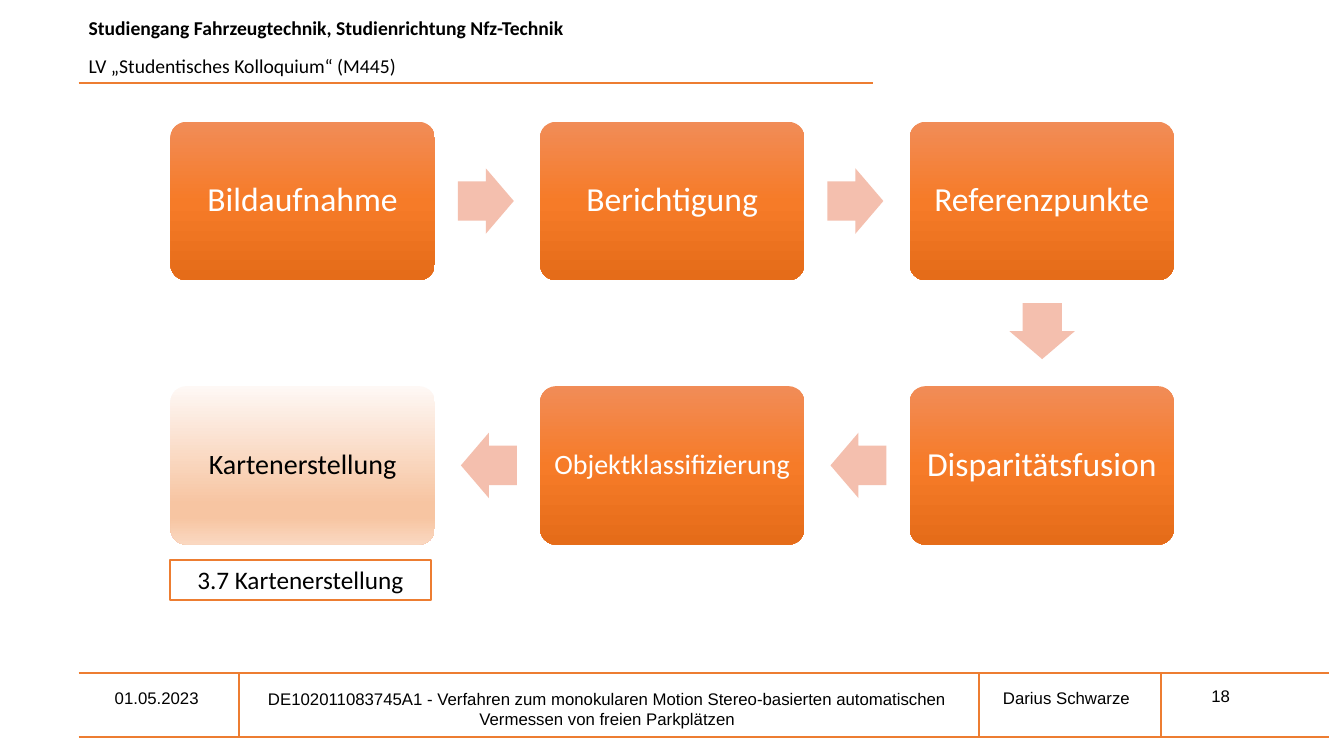
from lxml import etree
from pptx import Presentation
from pptx.dml.color import RGBColor
from pptx.enum.shapes import MSO_CONNECTOR, MSO_SHAPE
from pptx.enum.text import MSO_ANCHOR, PP_ALIGN
from pptx.oxml import parse_xml
from pptx.oxml.ns import nsdecls, qn
from pptx.util import Pt

LEFT, CENTER = PP_ALIGN.LEFT, PP_ALIGN.CENTER
TOP, MIDDLE = MSO_ANCHOR.TOP, MSO_ANCHOR.MIDDLE
STRAIGHT = MSO_CONNECTOR.STRAIGHT
RECTANGLE, ROUNDED = MSO_SHAPE.RECTANGLE, MSO_SHAPE.ROUNDED_RECTANGLE
RIGHT_ARROW = MSO_SHAPE.RIGHT_ARROW

ORANGE, PALE_ORANGE = "ED7D31", "F4BFAE"
BLACK, WHITE = "000000", "FFFFFF"
STEP_GRADIENT = [(0, "F18C57"), (50, "F67B28"), (100, "E56C19")]
CURRENT_GRADIENT = [(0, "FEF8F5"), (74, "F7C5A2"), (83, "F7C5A2"), (100, "FAD8C1")]


def color(hex_value):
    return RGBColor.from_string(hex_value)


def write(shape, text, font_name, size, hex_value=BLACK, alignment=LEFT, anchor=TOP):
    """Fill a shape with wrapped text, all in one format."""
    frame = shape.text_frame
    frame.text = text
    frame.word_wrap = True
    frame.vertical_anchor = anchor
    for paragraph in frame.paragraphs:
        paragraph.alignment = alignment
        paragraph.font.name = font_name
        paragraph.font.size = Pt(size)
        paragraph.font.color.rgb = color(hex_value)


presentation = Presentation()
presentation.slide_width, presentation.slide_height = Pt(960), Pt(540)
slide = presentation.slides.add_slide(presentation.slide_layouts[6])
shapes = slide.shapes

# Header
header = shapes.add_textbox(Pt(56.2), Pt(8), Pt(648), Pt(37))
write(header, "Studiengang Fahrzeugtechnik, Studienrichtung Nfz-Technik\n"
      "LV „Studentisches Kolloquium“ (M445)", "Calibri", 14)
title, course = header.text_frame.paragraphs
title.font.bold = True
course.space_before = Pt(10)

# Footer
footer_texts = [
    ("Darius Schwarze", 686.2, 483.8, 151.2, 28.8, CENTER, MIDDLE),
    ("DE102011083745A1 - Verfahren zum monokularen Motion Stereo-basierten "
     "automatischen Vermessen von freien Parkplätzen", 167.8, 488.2, 532, 58.3, CENTER, TOP),
    ("01.05.2023", 74.9, 487.4, 233.3, 21.6, LEFT, TOP),
    ("18", 858.2, 486.4, 67, 21.6, LEFT, TOP),
]
for text, left, top, width, height, alignment, anchor in footer_texts:
    box = shapes.add_textbox(Pt(left), Pt(top), Pt(width), Pt(height))
    write(box, text, "Arial", 12, alignment=alignment, anchor=anchor)

# Rules of header and footer
rule_left, rule_right, footer_top, footer_bottom = 56.2, 949, 481, 526.3
rules = [
    (rule_left, 59, 623.5, 59),
    (rule_left, footer_top, rule_right, footer_top),
    (rule_left, footer_bottom, rule_right, footer_bottom),
]
rules += [(x, footer_top, x, footer_bottom) for x in (170.6, 699.1, 829.4)]
for rule in rules:
    connector = shapes.add_connector(STRAIGHT, *map(Pt, rule))
    connector.line.color.rgb = color(ORANGE)
    connector.line.width = Pt(1.5)
    etree.SubElement(connector._element.spPr, qn("a:effectLst"))

# Process steps: three columns, two rows
step_left, step_top, step_width, step_height = 121.8, 87, 188.8, 113.2
column_pitch, row_pitch = 264, 188.8
steps = [
    ("Bildaufnahme", 0, 0, 24, WHITE, STEP_GRADIENT),
    ("Berichtigung", 1, 0, 24, WHITE, STEP_GRADIENT),
    ("Referenzpunkte", 2, 0, 24, WHITE, STEP_GRADIENT),
    ("Disparitätsfusion", 2, 1, 24, WHITE, STEP_GRADIENT),
    ("Objektklassifizierung", 1, 1, 20, WHITE, STEP_GRADIENT),
    ("Kartenerstellung", 0, 1, 20, BLACK, CURRENT_GRADIENT),
]
for text, column, row, size, text_color, gradient in steps:
    step = shapes.add_shape(ROUNDED, Pt(step_left + column * column_pitch),
                            Pt(step_top + row * row_pitch), Pt(step_width), Pt(step_height))
    step.adjustments[0] = 0.1
    step.shadow.inherit = False
    step.line.fill.background()
    stops = "".join(f'<a:gs pos="{position * 1000}"><a:srgbClr val="{stop}"/></a:gs>'
                    for position, stop in gradient)
    step._element.spPr.find(qn("a:prstGeom")).addnext(parse_xml(
        f'<a:gradFill {nsdecls("a")} rotWithShape="1"><a:gsLst>{stops}</a:gsLst>'
        '<a:lin ang="5400000" scaled="0"/></a:gradFill>'))
    write(step, text, "Calibri", size, text_color, CENTER, MIDDLE)
    frame = step.text_frame
    frame.margin_left = frame.margin_right = Pt(size * 0.29)
    frame.margin_top = frame.margin_bottom = Pt(size * 0.29)
    frame.paragraphs[0].line_spacing = 0.9

# Arrows between the steps
arrow_top = 120.2
arrows = [(327 + column * column_pitch, arrow_top, 0) for column in (0, 1)]
arrows.append((724.4, 213.1, 90))
arrows += [(329.2 + column * column_pitch, arrow_top + row_pitch, 180) for column in (1, 0)]
for left, top, rotation in arrows:
    arrow = shapes.add_shape(RIGHT_ARROW, Pt(left), Pt(top), Pt(40), Pt(46.8))
    arrow.adjustments[0], arrow.adjustments[1] = 0.6, 0.5
    arrow.rotation = rotation
    arrow.shadow.inherit = False
    arrow.fill.solid()
    arrow.fill.fore_color.rgb = color(PALE_ORANGE)
    arrow.line.fill.background()

# Chapter label
label = shapes.add_shape(RECTANGLE, Pt(121.3), Pt(399.8), Pt(186.5), Pt(29))
label.shadow.inherit = False
label.fill.solid()
label.fill.fore_color.rgb = color(WHITE)
label.line.color.rgb = color(ORANGE)
label.line.width = Pt(1.5)
write(label, "3.7 Kartenerstellung", "Calibri", 18, alignment=CENTER)

presentation.save("out.pptx")
